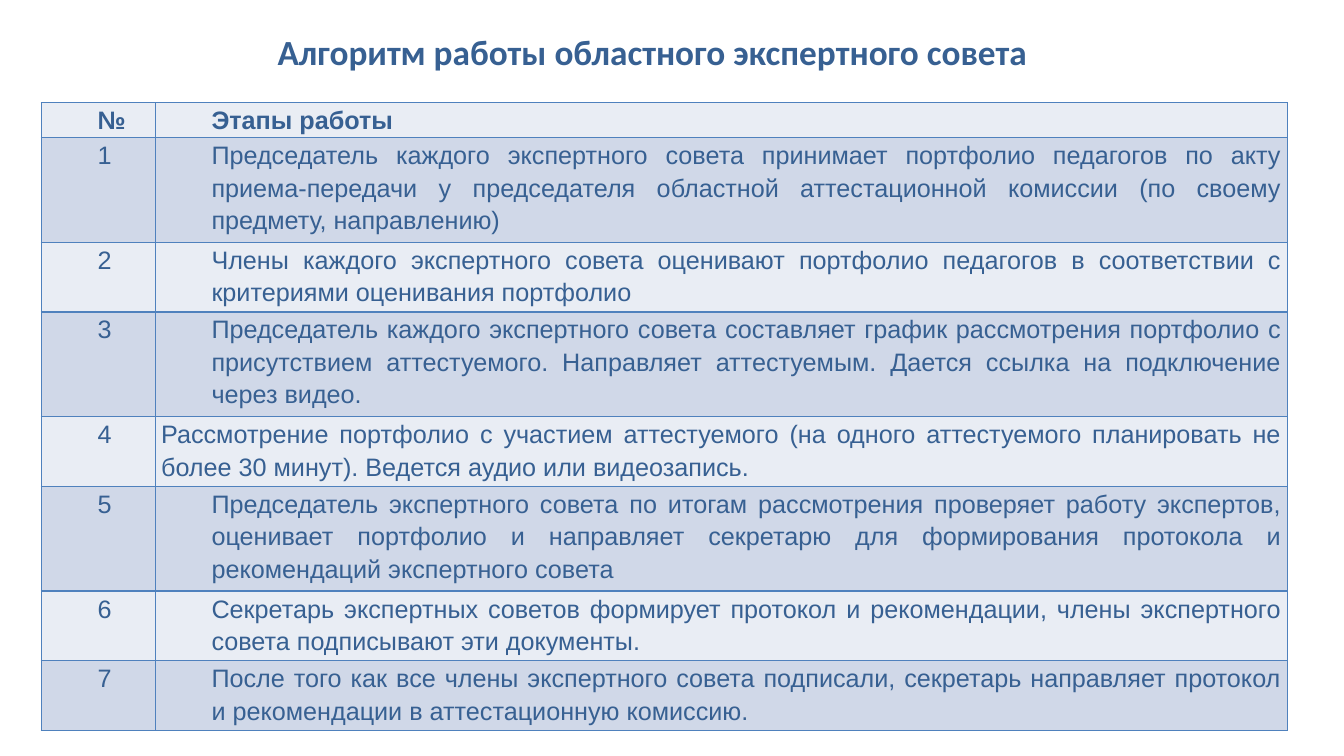
from dataclasses import dataclass

from lxml.etree import SubElement
from pptx import Presentation
from pptx.dml.color import RGBColor
from pptx.enum.text import MSO_ANCHOR, PP_ALIGN as Align
from pptx.oxml import parse_xml
from pptx.oxml.ns import nsdecls, qn
from pptx.util import Cm, Pt


@dataclass(frozen=True)
class Theme:
    """Colours, fonts and type sizes of the slide."""
    ink: str = "376092"
    border: str = "4F81BD"
    bands: tuple = ("E9EDF4", "D0D8E8")
    title_font: str = "Calibri"
    body_font: str = "Arial"
    title_size: float = 25.2
    body_size: float = 18
    border_width: float = 1


THEME = Theme()
TITLE = "Алгоритм работы областного экспертного совета"
HEADER = ("№", "Этапы работы")
STAGES = (
    "Председатель каждого экспертного совета принимает портфолио педагогов по акту "
    "приема-передачи у председателя областной аттестационной комиссии "
    "(по своему предмету, направлению)",
    "Члены каждого экспертного совета оценивают портфолио педагогов в соответствии "
    "с критериями оценивания портфолио",
    "Председатель каждого экспертного совета составляет график рассмотрения портфолио "
    "с присутствием аттестуемого. Направляет аттестуемым. Дается ссылка на подключение "
    "через видео.",
    "Рассмотрение портфолио с участием аттестуемого (на одного аттестуемого планировать "
    "не более 30 минут). Ведется аудио или видеозапись.",
    "Председатель экспертного совета по итогам рассмотрения проверяет работу экспертов, "
    "оценивает портфолио и направляет секретарю для формирования протокола и "
    "рекомендаций экспертного совета",
    "Секретарь экспертных советов формирует протокол и рекомендации, члены экспертного "
    "совета подписывают эти документы.",
    "После того как все члены экспертного совета подписали, секретарь направляет "
    "протокол и рекомендации в аттестационную комиссию.",
)
ROW_LINES = (1, 3, 2, 3, 2, 3, 2, 2)
LINE_HEIGHTS = {1: 0.84, 2: 1.73, 3: 2.64}
UNINDENTED_STAGE = 4
NUMBER_WIDTH = 2.87
INDENT = 1.27


def style_para(para, font, size, bold, align):
    """Format a paragraph and its runs."""
    para.alignment = align
    for span in para.runs:
        span.font.name = font
        span.font.size = Pt(size)
        span.font.bold = bold
        span.font.color.rgb = RGBColor.from_string(THEME.ink)


def add_title(page, left, top, width, height):
    """Place the centred heading in its box."""
    box = page.shapes.add_textbox(Cm(left), Cm(top), Cm(width), Cm(height))
    frame = box.text_frame
    frame.word_wrap = True
    frame.vertical_anchor = MSO_ANCHOR.TOP
    frame.margin_top = frame.margin_bottom = 0
    frame.text = TITLE
    style_para(frame.paragraphs[0], THEME.title_font, THEME.title_size, True, Align.CENTER)


def add_borders(cell):
    """Draw a line on all four sides of a cell."""
    properties = cell._tc.get_or_add_tcPr()
    for index, side in enumerate(("lnL", "lnR", "lnT", "lnB")):
        line = parse_xml(f'<a:{side} {nsdecls("a")} w="{Pt(THEME.border_width)}"/>')
        fill = SubElement(line, qn("a:solidFill"))
        SubElement(fill, qn("a:srgbClr"), val=THEME.border)
        properties.insert(index, line)


def fill_cell(cell, text, band, bold, indented):
    """Write one table cell with its band colour and borders."""
    cell.margin_left = cell.margin_right = Cm(0.15)
    cell.margin_top = cell.margin_bottom = 0
    cell.fill.solid()
    cell.fill.fore_color.rgb = RGBColor.from_string(band)
    add_borders(cell)
    cell.text_frame.text = text
    para = cell.text_frame.paragraphs[0]
    para.line_spacing = 1.15
    style_para(para, THEME.body_font, THEME.body_size, bold, Align.JUSTIFY)
    if indented:
        para._p.get_or_add_pPr().set("marL", str(Cm(INDENT)))


def add_stages(page, left, top, width):
    """Place the table of numbered stages."""
    rows = [HEADER, *((str(number), stage) for number, stage in enumerate(STAGES, 1))]
    heights = [Cm(LINE_HEIGHTS[lines]) for lines in ROW_LINES]
    table = page.shapes.add_table(
        len(rows), len(HEADER), Cm(left), Cm(top), Cm(width), sum(heights)).table
    table.first_row = table.horz_banding = False
    table.columns[0].width = Cm(NUMBER_WIDTH)
    table.columns[1].width = Cm(width - NUMBER_WIDTH)
    for index, (texts, height) in enumerate(zip(rows, heights)):
        table.rows[index].height = height
        for column, text in enumerate(texts):
            indented = column == 0 or index != UNINDENTED_STAGE
            band = THEME.bands[index % 2]
            fill_cell(table.cell(index, column), text, band, index == 0, indented)


def main():
    """Build the deck and save it."""
    deck = Presentation()
    deck.slide_width, deck.slide_height = Cm(33.87), Cm(19.05)
    page = deck.slides.add_slide(deck.slide_layouts[6])
    add_title(page, 0.71, 0.76, 31.47, 1.9)
    add_stages(page, 1.04, 2.59, 31.4)
    deck.save("out.pptx")


if __name__ == "__main__":
    main()
